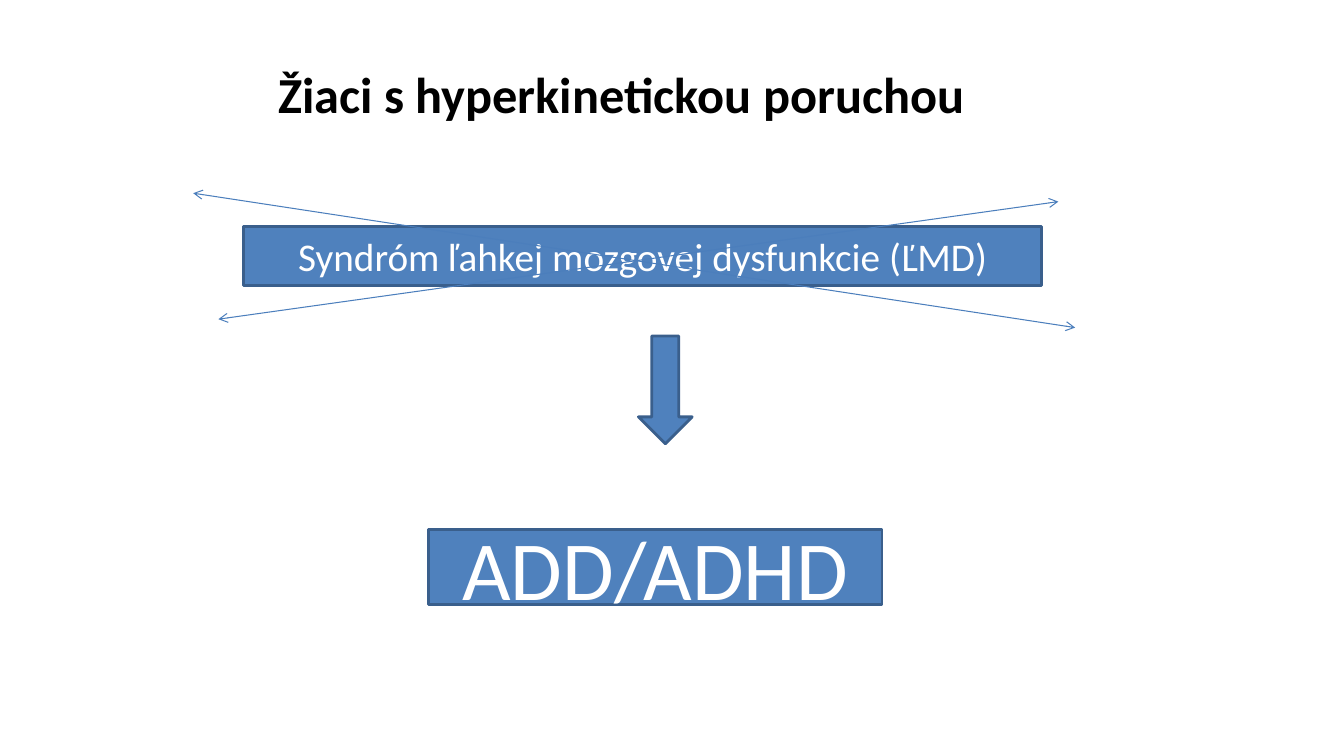
from lxml import etree
from pptx import Presentation
from pptx import util as u
from pptx.dml.color import RGBColor
from pptx.enum import shapes, text
from pptx.oxml.ns import qn

FONT = "Calibri"
COLORS = {
    "title": "000000",
    "box_text": "FFFFFF",
    "fill": "4F81BD",
    "outline": "3A5F8C",
    "cross": "4B7EBC",
}


def color(name):
    return RGBColor.from_string(COLORS[name])


def write(shape, content, size, color_name, bold=False):
    """Put one centred line of text in the middle of the shape."""
    frame = shape.text_frame
    frame.word_wrap = True
    frame.vertical_anchor = text.MSO_ANCHOR.MIDDLE
    paragraph = frame.paragraphs[0]
    paragraph.alignment = text.PP_ALIGN.CENTER
    run = paragraph.add_run()
    run.text = content
    run.font.name = FONT
    run.font.size = u.Pt(size)
    run.font.bold = bold
    run.font.color.rgb = color(color_name)


def add_title(slide, content, left, top, width, height):
    box = slide.shapes.add_textbox(u.Pt(left), u.Pt(top), u.Pt(width), u.Pt(height))
    write(box, content, 36, "title", bold=True)


def add_block(slide, kind, left, top, width, height):
    shape = slide.shapes.add_shape(
        kind, u.Pt(left), u.Pt(top), u.Pt(width), u.Pt(height)
    )
    shape.shadow.inherit = False
    shape.fill.solid()
    shape.fill.fore_color.rgb = color("fill")
    shape.line.color.rgb = color("outline")
    shape.line.width = u.Pt(2)
    return shape


def add_double_arrow(slide, start_x, start_y, end_x, end_y):
    connector = slide.shapes.add_connector(
        shapes.MSO_CONNECTOR.STRAIGHT,
        u.Pt(start_x), u.Pt(start_y), u.Pt(end_x), u.Pt(end_y),
    )
    connector.line.color.rgb = color("cross")
    connector.line.width = u.Pt(0.75)
    line = connector.line._get_or_add_ln()
    for end in ("a:headEnd", "a:tailEnd"):
        etree.SubElement(line, qn(end), type="arrow")
    etree.SubElement(connector._element.spPr, qn("a:effectLst"))


def main():
    presentation = Presentation()
    presentation.slide_width = u.Pt(960)
    presentation.slide_height = u.Pt(540)
    slide = presentation.slides.add_slide(presentation.slide_layouts[6])
    rectangle = shapes.MSO_SHAPE.RECTANGLE

    add_title(slide, "Žiaci s hyperkinetickou poruchou", 120, 21.6, 648, 90)

    old_term = add_block(slide, rectangle, 174, 162, 570, 42)
    write(old_term, "Syndróm ľahkej mozgovej dysfunkcie (ĽMD)", 28, "box_text")
    add_double_arrow(slide, 138, 138, 768, 234)
    add_double_arrow(slide, 756, 144, 156, 228)

    add_block(slide, shapes.MSO_SHAPE.DOWN_ARROW, 456, 240, 38.4, 77)

    new_term = add_block(slide, rectangle, 306, 378, 324, 54)
    write(new_term, "ADD/ADHD", 60, "box_text")

    presentation.save("out.pptx")


if __name__ == "__main__":
    main()
